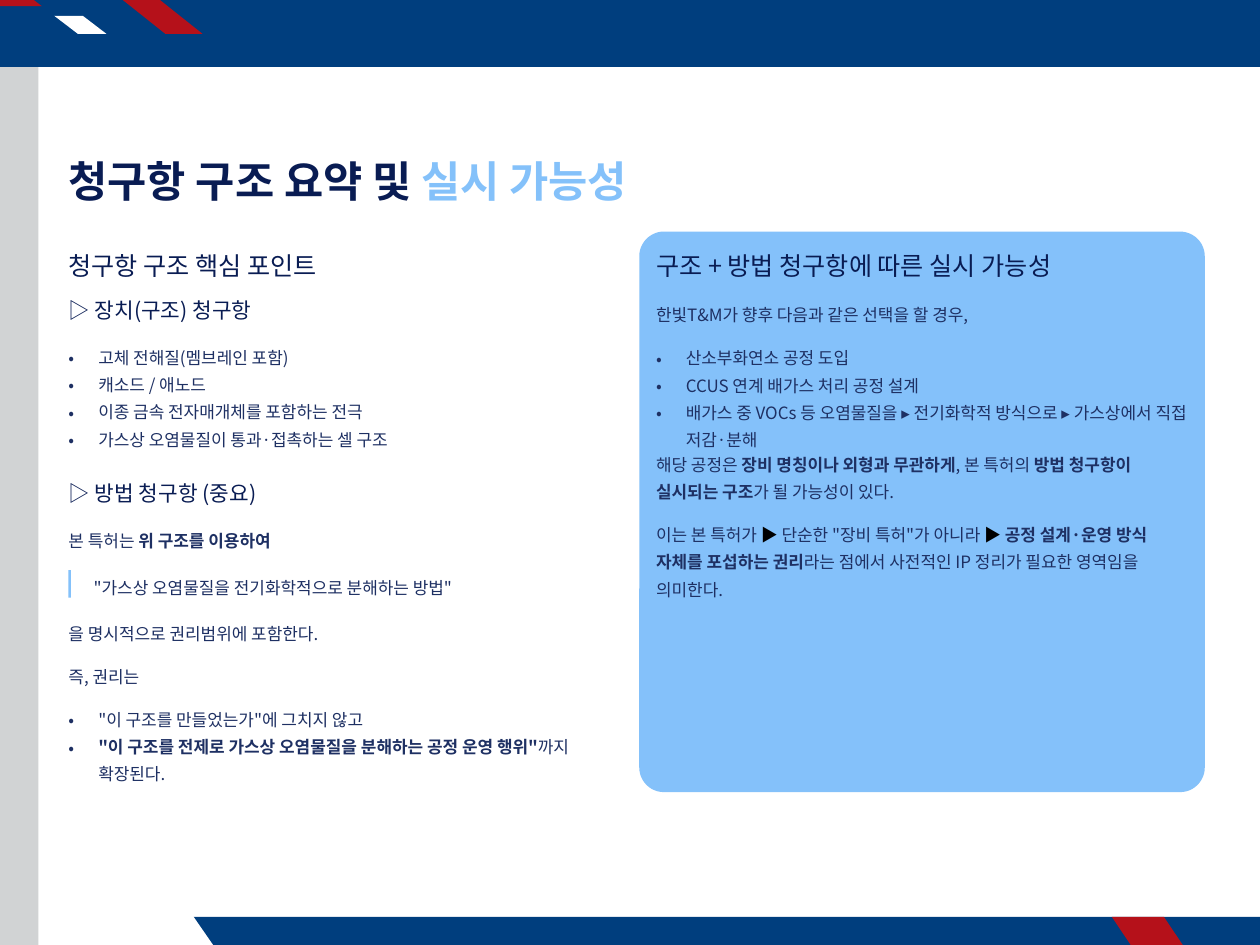
from dataclasses import dataclass
from typing import NamedTuple

from lxml import etree
from pptx import Presentation
from pptx.dml.color import RGBColor
from pptx.enum.shapes import MSO_SHAPE
from pptx.oxml.ns import qn
from pptx.util import Cm, Pt

RECTANGLE = MSO_SHAPE.RECTANGLE
ROUNDED = MSO_SHAPE.ROUNDED_RECTANGLE

WHITE = RGBColor(0xFF, 0xFF, 0xFF)
BLACK = RGBColor(0x00, 0x00, 0x00)
NAVY = RGBColor(0x09, 0x1C, 0x53)
INK = RGBColor(0x1E, 0x30, 0x63)
SKY = RGBColor(0x84, 0xC1, 0xFA)
BLUE = RGBColor(0x00, 0x3E, 0x7E)
RED = RGBColor(0xB5, 0x11, 0x1A)
GRAY = RGBColor(0xD1, 0xD3, 0xD4)

FONT = "Noto Sans CJK KR"
WIDTH, HEIGHT = 40.64, 30.48
LEFT, RIGHT = 2.21, 21.16
LEFT_WIDTH, RIGHT_WIDTH = 17.45, 17.15
LINE = 0.89
FOOTER_TOP = 29.57
QUOTE_TOP = 18.39
BULLET_INDENT = 0.96


class Style(NamedTuple):
    size: float
    line: float
    color: RGBColor
    bold: bool = False
    bullet: bool = False


class Span(NamedTuple):
    text: str
    bold: bool = False
    color: RGBColor | None = None


@dataclass
class TextBlock:
    left: float
    top: float
    width: float
    height: float
    style: Style
    paragraphs: list[list[Span]]


class Block(NamedTuple):
    left: float
    top: float
    width: float
    height: float
    color: RGBColor


class Stripe(NamedTuple):
    color: RGBColor
    points: list[tuple[float, float]]


TITLE = Style(39, 48.5, NAVY, bold=True)
HEADING = Style(23, 29, NAVY)
SUBHEADING = Style(19.5, 24, NAVY)
BODY = Style(15.5, 25, INK)
BULLETS = BODY._replace(bullet=True)


def plain(*lines: str) -> list[list[Span]]:
    return [[Span(line)] for line in lines]


LEFT_COLUMN = [
    TextBlock(LEFT, 4.93, 18.4, 1.73, TITLE,
              [[Span("청구항 구조 요약 및 "), Span("실시 가능성", color=SKY)]]),
    TextBlock(LEFT, 8.03, 8.5, 1.04, HEADING, plain("청구항 구조 핵심 포인트")),
    TextBlock(LEFT, 9.55, 6.88, 0.86, SUBHEADING, plain("▷ 장치(구조) 청구항")),
    TextBlock(LEFT, 10.97, LEFT_WIDTH, 3.53, BULLETS, plain(
        "고체 전해질(멤브레인 포함)",
        "캐소드 / 애노드",
        "이종 금속 전자매개체를 포함하는 전극",
        "가스상 오염물질이 통과·접촉하는 셀 구조")),
    TextBlock(LEFT, 15.47, 6.88, 0.86, SUBHEADING, plain("▷ 방법 청구항 (중요)")),
    TextBlock(LEFT, 16.89, LEFT_WIDTH, LINE, BODY,
              [[Span("본 특허는 "), Span("위 구조를 이용하여", bold=True)]]),
    TextBlock(3.02, QUOTE_TOP, 16.61, LINE, BODY,
              plain('"가스상 오염물질을 전기화학적으로 분해하는 방법"')),
    TextBlock(LEFT, 19.89, LEFT_WIDTH, LINE, BODY,
              plain("을 명시적으로 권리범위에 포함한다.")),
    TextBlock(LEFT, 21.28, LEFT_WIDTH, LINE, BODY, plain("즉, 권리는")),
    TextBlock(LEFT, 22.65, LEFT_WIDTH, 2.64, BULLETS, [
        [Span('"이 구조를 만들었는가"에 그치지 않고')],
        [Span('"이 구조를 전제로 가스상 오염물질을 분해하는 공정 운영 행위"', bold=True),
         Span("까지 확장된다.")]]),
]

RIGHT_COLUMN = [
    TextBlock(RIGHT, 8.03, 13.6, 1.04, HEADING,
              plain("구조 + 방법 청구항에 따른 실시 가능성")),
    TextBlock(RIGHT, 9.6, RIGHT_WIDTH, LINE, BODY,
              plain("한빛T&M가 향후 다음과 같은 선택을 할 경우,")),
    TextBlock(RIGHT, 10.99, RIGHT_WIDTH, 3.53, BULLETS, plain(
        "산소부화연소 공정 도입",
        "CCUS 연계 배가스 처리 공정 설계",
        "배가스 중 VOCs 등 오염물질을 ▸ 전기화학적 방식으로 ▸ 가스상에서 직접 저감·분해")),
    TextBlock(RIGHT, 14.43, RIGHT_WIDTH, 1.75, BODY, [[
        Span("해당 공정은 "),
        Span("장비 명칭이나 외형과 무관하게", bold=True),
        Span(", 본 특허의 "),
        Span("방법 청구항이 실시되는 구조", bold=True),
        Span("가 될 가능성이 있다.")]]),
    TextBlock(RIGHT, 16.69, RIGHT_WIDTH, 1.75, BODY, [[
        Span("이는 본 특허가 "),
        Span("▶", color=BLACK),
        Span(' 단순한 "장비 특허"가 아니라 '),
        Span("▶ ", color=BLACK),
        Span("공정 설계·운영 방식 자체를 포섭하는 권리", bold=True),
        Span("라는 점에서 사전적인 IP 정리가 필요한 영역임을 의미한다.")]]),
]

QUOTE_BAR = Block(LEFT, QUOTE_TOP, 0.08, LINE, SKY)
CARD = Block(20.62, 7.47, 18.24, 18.08, SKY)
SIDE_BAR = Block(0, 1.09, 1.24, HEIGHT - 1.09, GRAY)
HEADER = Block(0, 0, WIDTH, 2.16, BLUE)

STRIPES = [
    Stripe(RED, [(0, 0), (1.09, 0), (1.35, 0.2), (0, 0.2)]),
    Stripe(RED, [(3.96, 0), (5.16, 0), (6.53, 1.09), (5.33, 1.09)]),
    Stripe(WHITE, [(1.75, 0.51), (2.67, 0.51), (3.43, 1.09), (2.51, 1.09)]),
    Stripe(BLUE, [(6.25, FOOTER_TOP), (WIDTH, FOOTER_TOP), (WIDTH, HEIGHT), (6.88, HEIGHT)]),
    Stripe(RED, [(35.86, FOOTER_TOP), (37.54, FOOTER_TOP), (38.15, HEIGHT), (36.47, HEIGHT)]),
]


def paint(shape, color: RGBColor) -> None:
    shape.shadow.inherit = False
    shape.fill.solid()
    shape.fill.fore_color.rgb = color
    shape.line.fill.background()


def draw_block(slide, block: Block, preset=RECTANGLE):
    shape = slide.shapes.add_shape(preset, *(Cm(length) for length in block[:4]))
    paint(shape, block.color)
    return shape


def draw_stripe(slide, stripe: Stripe) -> None:
    start, *others = [(Cm(x), Cm(y)) for x, y in stripe.points]
    builder = slide.shapes.build_freeform(*start)
    builder.add_line_segments(others, close=True)
    paint(builder.convert_to_shape(), stripe.color)


def format_paragraph(paragraph, style: Style) -> None:
    paragraph.line_spacing = Pt(style.line)
    properties = paragraph._p.get_or_add_pPr()
    if style.bullet:
        properties.set("marL", str(Cm(BULLET_INDENT)))
        properties.set("indent", str(-Cm(BULLET_INDENT)))
        etree.SubElement(properties, qn("a:buFont"), typeface=FONT)
        etree.SubElement(properties, qn("a:buChar"), char="•")
    font = paragraph.font
    font.size = Pt(style.size)
    font.bold = style.bold
    font.color.rgb = style.color
    font.name = FONT
    # East Asian typeface for the Korean text
    etree.SubElement(properties.find(qn("a:defRPr")), qn("a:ea"), typeface=FONT)


def draw_text(slide, block: TextBlock) -> None:
    box = slide.shapes.add_textbox(Cm(block.left), Cm(block.top), Cm(block.width), Cm(block.height))
    frame = box.text_frame
    frame.word_wrap = True
    frame.margin_left = frame.margin_right = frame.margin_top = frame.margin_bottom = 0
    for index, spans in enumerate(block.paragraphs):
        paragraph = frame.add_paragraph() if index else frame.paragraphs[0]
        format_paragraph(paragraph, block.style)
        for span in spans:
            run = paragraph.add_run()
            run.text = span.text
            if span.bold:
                run.font.bold = True
            if span.color is not None:
                run.font.color.rgb = span.color


def main() -> None:
    presentation = Presentation()
    presentation.slide_width, presentation.slide_height = Cm(WIDTH), Cm(HEIGHT)
    slide = presentation.slides.add_slide(presentation.slide_layouts[6])
    slide.background.fill.solid()
    slide.background.fill.fore_color.rgb = WHITE

    # Claim structure on the left
    for block in LEFT_COLUMN:
        draw_text(slide, block)
    draw_block(slide, QUOTE_BAR)

    # Feasibility card on the right
    draw_block(slide, CARD, ROUNDED).adjustments[0] = 0.044
    for block in RIGHT_COLUMN:
        draw_text(slide, block)

    # Frame decoration
    for block in (SIDE_BAR, HEADER):
        draw_block(slide, block)
    for stripe in STRIPES:
        draw_stripe(slide, stripe)

    presentation.save("out.pptx")


if __name__ == "__main__":
    main()
